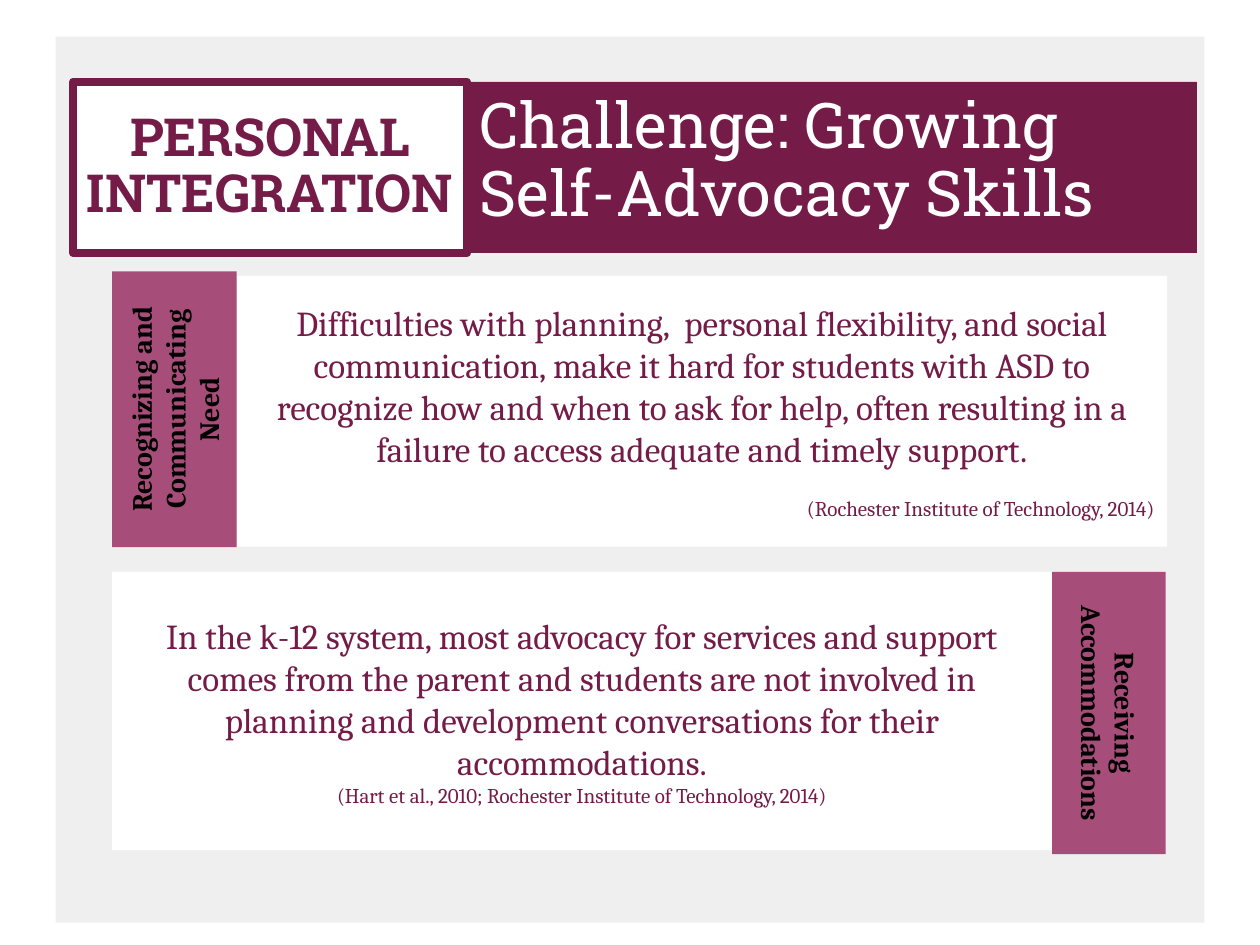
from pptx import Presentation
from pptx.dml.color import RGBColor
from pptx.enum import shapes, text
from pptx.util import Cm, Pt

PLUM, ROSE, GREY, WHITE, BLACK = "741B47", "A64D79", "EFEFEF", "FFFFFF", "000000"
BODY, HEAD = "Cambria", "Roboto Slab"
MID, TOP = text.MSO_ANCHOR.MIDDLE, text.MSO_ANCHOR.TOP
LEFT, CENTER, RIGHT = text.PP_ALIGN.LEFT, text.PP_ALIGN.CENTER, text.PP_ALIGN.RIGHT

TITLE = "PERSONAL INTEGRATION"
BANNER = "Challenge: Growing Self-Advocacy Skills"

# box (left, top, width, height in cm), main text, citation, its alignment, gap in points
CARDS = [
    ((2.26, 11.53, 18.95, 5.61),
     "In the k-12 system, most advocacy for services and support comes from the "
     "parent and students are not involved in planning and development "
     "conversations for their accommodations.",
     "(Hart et al., 2010; Rochester Institute of Technology, 2014)", CENTER, 0),
    ((4.78, 5.56, 18.75, 5.46),
     "Difficulties with planning,  personal flexibility, and social communication, "
     "make it hard for students with ASD to recognize how and when to ask for help, "
     "often resulting in a failure to access adequate and timely support.",
     "(Rochester Institute of Technology, 2014)", RIGHT, 14.5),
]

# box as it stands upright on the slide, turn, label
TABS = [
    ((2.26, 5.47, 2.51, 5.56), 270, "Recognizing and Communicating Need"),
    ((21.21, 11.53, 2.29, 5.69), 90, "Receiving Accommodations"),
]


def color(code):
    return RGBColor.from_string(code)


def block(box, fill):
    shape = slide.shapes.add_shape(shapes.MSO_SHAPE.RECTANGLE, *map(Cm, box))
    shape.shadow.inherit = False
    shape.fill.solid()
    shape.fill.fore_color.rgb = color(fill)
    shape.line.fill.background()
    return shape


def write(shape, lines, font, ink, anchor=MID, bold=False, spacing=None):
    """Fill a shape with lines of (text, size, alignment, space before)."""
    frame = shape.text_frame
    frame.word_wrap = True
    frame.auto_size = text.MSO_AUTO_SIZE.NONE
    frame.vertical_anchor = anchor
    frame.margin_left = frame.margin_right = Cm(0.25)
    frame.margin_top = frame.margin_bottom = Cm(0.25)
    frame.text = "\n".join(line[0] for line in lines)
    for para, (_, size, align, gap) in zip(frame.paragraphs, lines):
        para.alignment = align
        para.space_before = Pt(gap)
        if spacing:
            para.line_spacing = spacing
        for run in para.runs:
            run.font.name = font
            run.font.size = Pt(size)
            run.font.bold = bold
            run.font.color.rgb = color(ink)


prs = Presentation()
prs.slide_width, prs.slide_height = Cm(25.4), Cm(19.05)
slide = prs.slides.add_slide(prs.slide_layouts[5])

panel = block((1.12, 0.74, 23.16, 17.86), GREY)

title = slide.shapes.title
panel._element.addnext(title._element)
title.left, title.top, title.width, title.height = map(Cm, (1.47, 1.65, 7.95, 3.45))
title.fill.solid()
title.fill.fore_color.rgb = color(WHITE)
title.line.color.rgb = color(PLUM)
title.line.width = Pt(4.5)
write(title, [(TITLE, 30, CENTER, 0)], HEAD, PLUM, bold=True, spacing=0.9)

for box, main, cite, align, gap in CARDS:
    write(block(box, WHITE), [(main, 20, CENTER, 0), (cite, 12, align, gap)], BODY, PLUM)

for (x, y, w, h), turn, label in TABS:
    # a turned shape is placed by its unturned frame around the same centre
    tab = block((x + (w - h) / 2, y + (h - w) / 2, h, w), ROSE)
    tab.rotation = turn
    write(tab, [(label, 16, CENTER, 0)], BODY, BLACK, bold=True)

banner = block((9.42, 1.65, 14.71, 3.45), PLUM)
write(banner, [(BANNER, 36, LEFT, 0)], HEAD, WHITE, anchor=TOP, spacing=0.9)

prs.save("out.pptx")
